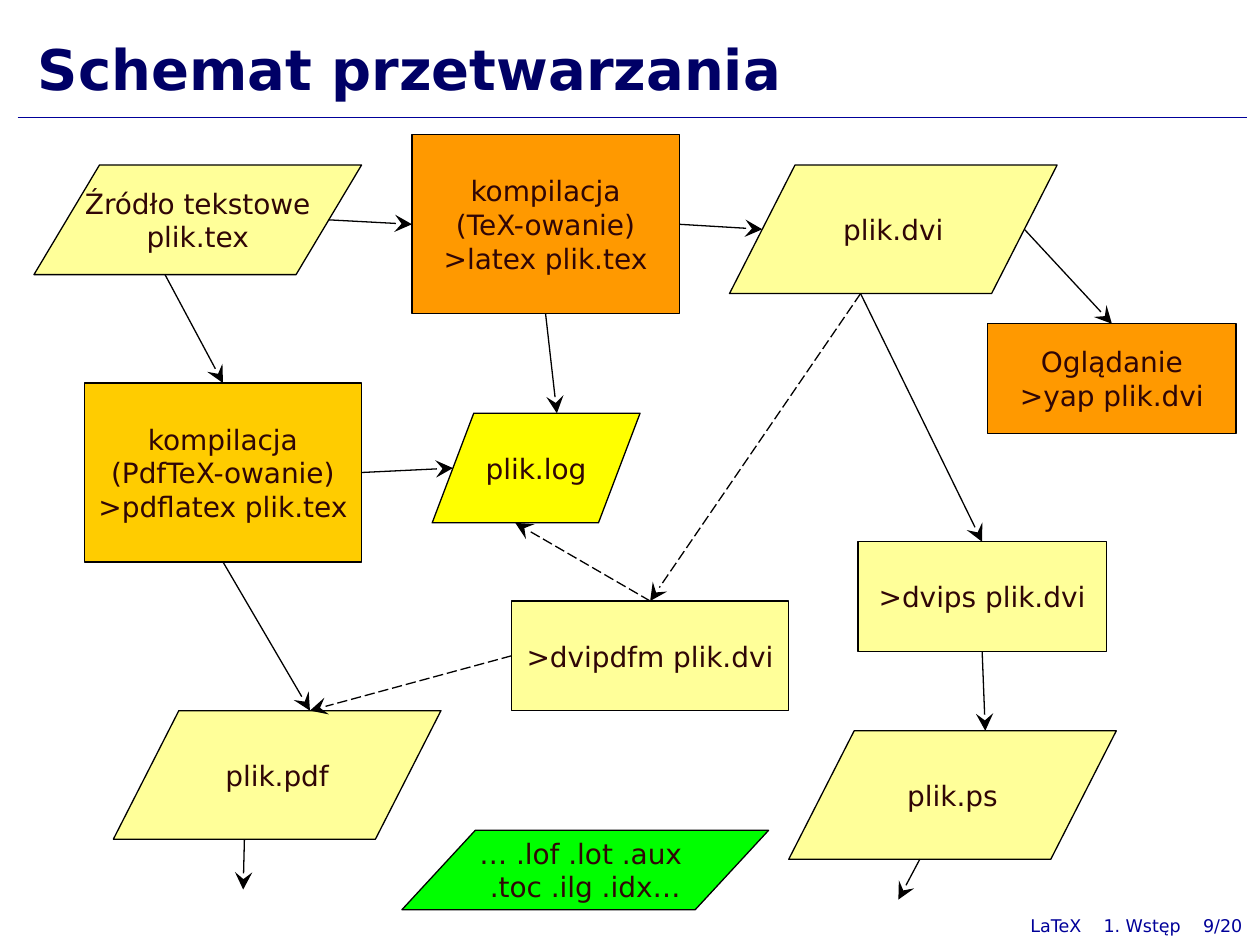
from lxml.etree import SubElement
from pptx import Presentation
from pptx.dml.color import RGBColor
from pptx.enum.dml import MSO_LINE
from pptx.enum.shapes import MSO_CONNECTOR, MSO_SHAPE
from pptx.enum.text import MSO_ANCHOR, MSO_AUTO_SIZE, PP_ALIGN
from pptx.oxml.ns import qn
from pptx.util import Inches, Pt

NAVY = RGBColor(0x00, 0x00, 0x66)
BLUE = RGBColor(0x00, 0x00, 0x99)
INK = RGBColor(0x01, 0x00, 0x00)
BROWN = RGBColor(0x30, 0x06, 0x06)
CREAM = RGBColor(0xFF, 0xFF, 0x99)
ORANGE = RGBColor(0xFF, 0x99, 0x00)
AMBER = RGBColor(0xFF, 0xCC, 0x00)
YELLOW = RGBColor(0xFF, 0xFF, 0x00)
GREEN = RGBColor(0x00, 0xFF, 0x00)

PROCESS = MSO_SHAPE.FLOWCHART_PROCESS
DATA = MSO_SHAPE.FLOWCHART_DATA
TOP, LEFT, BOTTOM, RIGHT = range(4)
DATA_SITES = {TOP: (0.6, 0), LEFT: (0.1, 0.5), BOTTOM: (0.4, 1), RIGHT: (0.9, 0.5)}
PROCESS_SITES = {TOP: (0.5, 0), LEFT: (0, 0.5), BOTTOM: (0.5, 1), RIGHT: (1, 0.5)}


class FlowSlide:
    """Holds the slide and the style of its flow chart."""

    font_name = "DejaVu Sans"
    line_width = Pt(0.75)

    def __init__(self, slide):
        self.slide = slide

    def format_text(self, text_frame, size, color, alignment, bold=False):
        for paragraph in text_frame.paragraphs:
            paragraph.alignment = alignment
            for run in paragraph.runs:
                run.font.name = self.font_name
                run.font.size = Pt(size)
                run.font.bold = bold
                run.font.color.rgb = color

    def title(self, text, left, top, width, height):
        title = self.slide.shapes.title
        title.left, title.top = Inches(left), Inches(top)
        title.width, title.height = Inches(width), Inches(height)
        text_frame = title.text_frame
        text_frame.text = text
        text_frame.auto_size = MSO_AUTO_SIZE.NONE
        text_frame.vertical_anchor = MSO_ANCHOR.BOTTOM
        text_frame.paragraphs[0].line_spacing = 0.7
        self.format_text(text_frame, 32, NAVY, PP_ALIGN.LEFT, bold=True)

    def footer(self, parts, tab_positions, left, top, width, height):
        box = self.slide.shapes.add_textbox(
            Inches(left), Inches(top), Inches(width), Inches(height))
        text_frame = box.text_frame
        text_frame.word_wrap = True
        text_frame.vertical_anchor = MSO_ANCHOR.MIDDLE
        text_frame.text = "\t".join(parts)
        self.format_text(text_frame, 10, BLUE, PP_ALIGN.LEFT)
        properties = text_frame.paragraphs[0]._p.get_or_add_pPr()
        tab_list = SubElement(properties, qn("a:tabLst"))
        for position in tab_positions:
            SubElement(tab_list, qn("a:tab"), pos=str(Inches(position)), algn="l")

    def box(self, kind, text, fill, left, top, width, height):
        shape = self.slide.shapes.add_shape(
            kind, Inches(left), Inches(top), Inches(width), Inches(height))
        shape.shadow.inherit = False
        shape.fill.solid()
        shape.fill.fore_color.rgb = fill
        shape.line.color.rgb = INK
        shape.line.width = self.line_width
        text_frame = shape.text_frame
        text_frame.text = text
        text_frame.word_wrap = False
        text_frame.vertical_anchor = MSO_ANCHOR.MIDDLE
        self.format_text(text_frame, 16, BROWN, PP_ALIGN.CENTER)
        return shape

    def line(self, start, end, color):
        connector = self.slide.shapes.add_connector(MSO_CONNECTOR.STRAIGHT, *start, *end)
        connector.line.color.rgb = color
        connector.line.width = self.line_width
        SubElement(connector._element.spPr, qn("a:effectLst"))
        return connector

    def arrow(self, start, end, dashed=False):
        connector = self.line(start, end, INK)
        if dashed:
            connector.line.dash_style = MSO_LINE.LONG_DASH
        SubElement(connector.line._get_or_add_ln(), qn("a:tailEnd"),
                   type="stealth", w="lg", len="lg")
        return connector

    def site(self, shape, side):
        sites = DATA_SITES if shape.auto_shape_type == DATA else PROCESS_SITES
        across, down = sites[side]
        return (round(shape.left + across * shape.width),
                round(shape.top + down * shape.height))

    def join(self, source, source_side, target, target_side, dashed=False):
        connector = self.arrow(
            self.site(source, source_side), self.site(target, target_side), dashed)
        if source.auto_shape_type == PROCESS:
            connector.begin_connect(source, source_side)
        if target.auto_shape_type == PROCESS:
            connector.end_connect(target, target_side)


def main():
    presentation = Presentation()
    presentation.slide_width = Inches(10)
    presentation.slide_height = Inches(7.5)
    chart = FlowSlide(presentation.slides.add_slide(presentation.slide_layouts[5]))

    chart.title("Schemat przetwarzania", 0.2, 0.13, 9.69, 0.71)
    chart.line((Inches(0.14), Inches(0.93)), (Inches(9.9), Inches(0.93)), BLUE)
    chart.footer(["LaTeX", "1. Wstęp", "9/20"], [0.58, 1.37], 8.08, 7.22, 1.88, 0.25)

    latex = chart.box(PROCESS, "kompilacja\n(TeX-owanie)\v>latex plik.tex",
                      ORANGE, 3.27, 1.07, 2.12, 1.42)
    source = chart.box(DATA, "Źródło tekstowe\nplik.tex", CREAM, 0.27, 1.31, 2.6, 0.87)
    dvi = chart.box(DATA, "plik.dvi", CREAM, 5.79, 1.31, 2.6, 1.02)
    pdflatex = chart.box(PROCESS, "kompilacja\n(PdfTeX-owanie)\v>pdflatex plik.tex",
                         AMBER, 0.67, 3.04, 2.2, 1.42)
    viewer = chart.box(PROCESS, "Oglądanie\v>yap plik.dvi", ORANGE, 7.84, 2.57, 1.97, 0.87)
    dvips = chart.box(PROCESS, ">dvips plik.dvi", CREAM, 6.81, 4.3, 1.97, 0.87)
    postscript = chart.box(DATA, "plik.ps", CREAM, 6.26, 5.8, 2.6, 1.02)
    pdf = chart.box(DATA, "plik.pdf", CREAM, 0.9, 5.64, 2.6, 1.02)
    log = chart.box(DATA, "plik.log", YELLOW, 3.43, 3.28, 1.65, 0.87)
    dvipdfm = chart.box(PROCESS, ">dvipdfm plik.dvi", CREAM, 4.06, 4.77, 2.2, 0.87)
    chart.box(DATA, "… .lof .lot .aux \v.toc .ilg .idx…", GREEN, 3.19, 6.59, 2.91, 0.63)

    chart.join(source, RIGHT, latex, LEFT)
    chart.join(latex, RIGHT, dvi, LEFT)
    chart.join(source, BOTTOM, pdflatex, TOP)
    chart.join(pdflatex, BOTTOM, pdf, TOP)
    chart.join(dvi, BOTTOM, dvips, TOP)
    chart.join(dvips, BOTTOM, postscript, TOP)
    chart.join(dvi, RIGHT, viewer, TOP)
    chart.join(pdflatex, RIGHT, log, LEFT)
    chart.join(latex, BOTTOM, log, TOP)
    chart.join(dvipdfm, LEFT, pdf, TOP, dashed=True)
    chart.join(dvi, BOTTOM, dvipdfm, TOP, dashed=True)
    chart.join(dvipdfm, TOP, log, BOTTOM, dashed=True)
    chart.arrow(chart.site(pdf, BOTTOM), (Inches(1.93), Inches(7.06)))
    chart.arrow(chart.site(postscript, BOTTOM), (Inches(7.13), Inches(7.14)))

    presentation.save("out.pptx")


if __name__ == "__main__":
    main()
